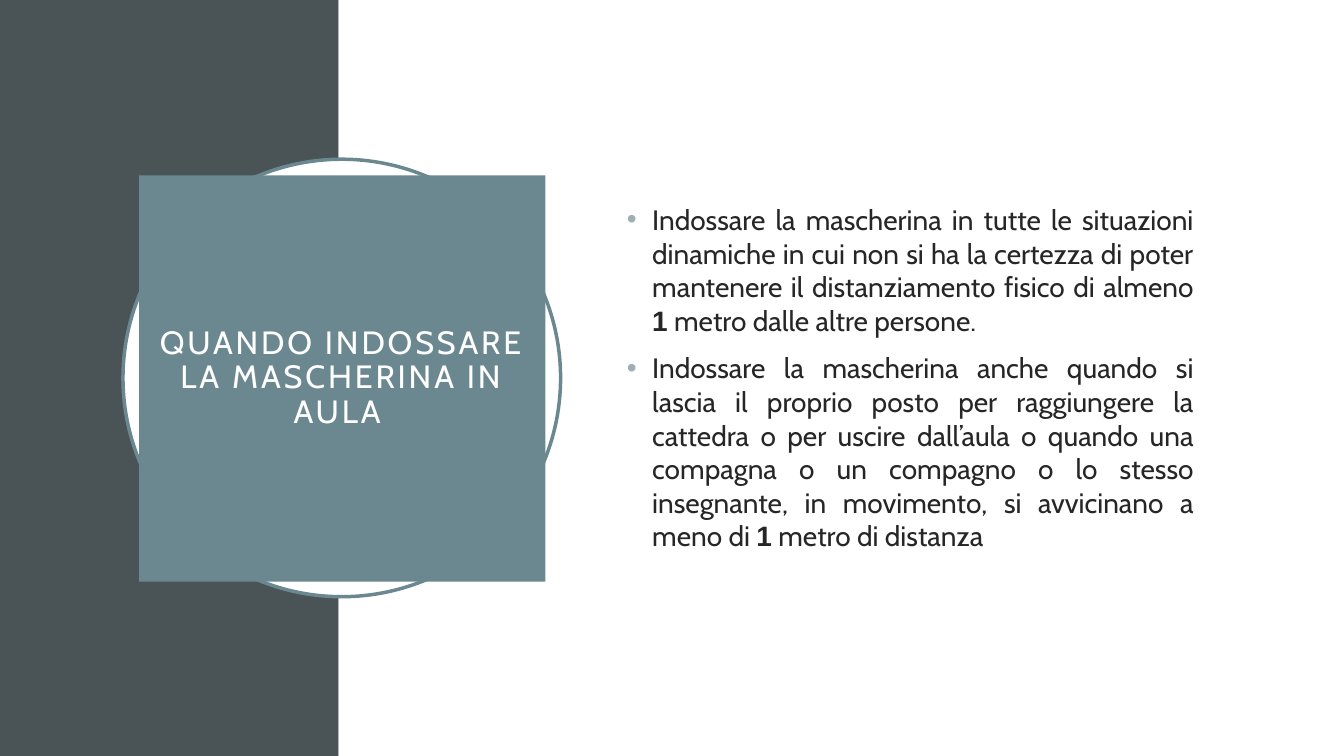
import dataclasses
import typing

import lxml.etree
import pptx
import pptx.dml.color
import pptx.enum.shapes
import pptx.enum.text
import pptx.oxml.ns
import pptx.util

Inches = pptx.util.Inches
Pt = pptx.util.Pt
RGBColor = pptx.dml.color.RGBColor
ShapeKind = pptx.enum.shapes.MSO_SHAPE
Align = pptx.enum.text.PP_ALIGN
qn = pptx.oxml.ns.qn

SLATE = RGBColor(0x4A, 0x53, 0x56)
TEAL = RGBColor(0x6B, 0x88, 0x91)
PALE_TEAL = RGBColor(0x9B, 0xAF, 0xB5)
INK = RGBColor(0x26, 0x26, 0x26)
WHITE = RGBColor(0xFF, 0xFF, 0xFF)

SLIDE_WIDTH, SLIDE_HEIGHT = 13.33, 7.5
BAND_WIDTH = 3.36
BULLET_INDENT = 0.25


@dataclasses.dataclass(frozen=True)
class Backdrop:
    kind: ShapeKind
    left: float
    top: float
    width: float
    height: float
    fill: RGBColor
    line: typing.Optional[RGBColor] = None


@dataclasses.dataclass(frozen=True)
class Rule:
    before: str
    number: str
    after: str


BACKDROPS = [
    Backdrop(ShapeKind.RECTANGLE, 0, 0, BAND_WIDTH, SLIDE_HEIGHT, SLATE),
    Backdrop(ShapeKind.RECTANGLE, BAND_WIDTH, 0, SLIDE_WIDTH - BAND_WIDTH, SLIDE_HEIGHT, WHITE),
    Backdrop(ShapeKind.OVAL, 1.22, 1.58, 4.34, 4.34, WHITE, TEAL),
]

TITLE = "QUANDO INDOSSARE LA MASCHERINA IN AULA "

RULES = [
    Rule(
        "Indossare la mascherina in tutte le situazioni dinamiche in cui non si ha la "
        "certezza di poter mantenere il distanziamento fisico di almeno ",
        "1",
        " metro dalle altre persone.",
    ),
    Rule(
        "Indossare la mascherina anche quando si lascia il proprio posto per raggiungere "
        "la cattedra o per uscire dall’aula o quando una compagna o un compagno o lo "
        "stesso insegnante, in movimento, si avvicinano a meno di ",
        "1",
        " metro di distanza",
    ),
]


def add_backdrop(slide, item: Backdrop):
    shape = slide.shapes.add_shape(
        item.kind, Inches(item.left), Inches(item.top), Inches(item.width), Inches(item.height)
    )
    shape.shadow.inherit = False
    shape.fill.solid()
    shape.fill.fore_color.rgb = item.fill
    if item.line is None:
        shape.line.fill.background()
    else:
        shape.line.color.rgb = item.line
        shape.line.width = Pt(2.5)
    return shape


def add_text(para, text: str, *, size: float, color: RGBColor, font: str = "Cabin",
             bold: bool = False, spacing: float = 0) -> None:
    span = para.add_run()
    span.text = text
    span.font.name = font
    span.font.size = Pt(size)
    span.font.bold = bold
    span.font.color.rgb = color
    if spacing:
        span.font._element.set("spc", str(round(spacing * 100)))


def add_bullet(para, color: RGBColor) -> None:
    props = para._p.get_or_add_pPr()
    props.set("marL", str(Inches(BULLET_INDENT)))
    props.set("indent", str(-Inches(BULLET_INDENT)))
    bullet_color = lxml.etree.SubElement(props, qn("a:buClr"))
    lxml.etree.SubElement(bullet_color, qn("a:srgbClr"), val=str(color))
    lxml.etree.SubElement(props, qn("a:buFont"), typeface="Arial")
    lxml.etree.SubElement(props, qn("a:buChar"), char="•")


def prepare_frame(box):
    frame = box.text_frame
    frame.word_wrap = True
    frame.auto_size = pptx.enum.text.MSO_AUTO_SIZE.NONE
    frame.vertical_anchor = pptx.enum.text.MSO_ANCHOR.MIDDLE
    return frame


def format_title(slide) -> None:
    title = slide.shapes.title
    title.left, title.top = Inches(1.38), Inches(1.74)
    title.width = title.height = Inches(4.03)
    title.fill.solid()
    title.fill.fore_color.rgb = TEAL
    frame = prepare_frame(title)
    frame.margin_left = frame.margin_right = Inches(0.2)
    frame.margin_top = frame.margin_bottom = Inches(0.2)
    para = frame.paragraphs[0]
    para.alignment = Align.CENTER
    para.line_spacing = 0.9
    para.space_before = Pt(0)
    add_text(para, TITLE, size=23, color=WHITE, spacing=2)


def add_rules(slide, rules: typing.Sequence[Rule]) -> None:
    box = slide.shapes.add_textbox(Inches(6.12), Inches(1.53), Inches(5.82), Inches(4.43))
    frame = prepare_frame(box)
    for index, rule in enumerate(rules):
        para = frame.add_paragraph() if index else frame.paragraphs[0]
        para.alignment = Align.JUSTIFY
        para.space_before = Pt(10)
        add_bullet(para, PALE_TEAL)
        add_text(para, rule.before, size=20, color=INK)
        add_text(para, rule.number, size=20, color=INK, font="Arial", bold=True)
        add_text(para, rule.after, size=20, color=INK)


def main() -> None:
    deck = pptx.Presentation()
    deck.slide_width, deck.slide_height = Inches(SLIDE_WIDTH), Inches(SLIDE_HEIGHT)
    slide = deck.slides.add_slide(deck.slide_layouts.get_by_name("Title Only"))

    # Side band, white page and ring
    shapes = [add_backdrop(slide, item) for item in BACKDROPS]

    # Title in front of the ring
    format_title(slide)
    shapes[-1].element.addnext(slide.shapes.title.element)

    # Bulleted rules
    add_rules(slide, RULES)
    deck.save("out.pptx")


if __name__ == "__main__":
    main()
